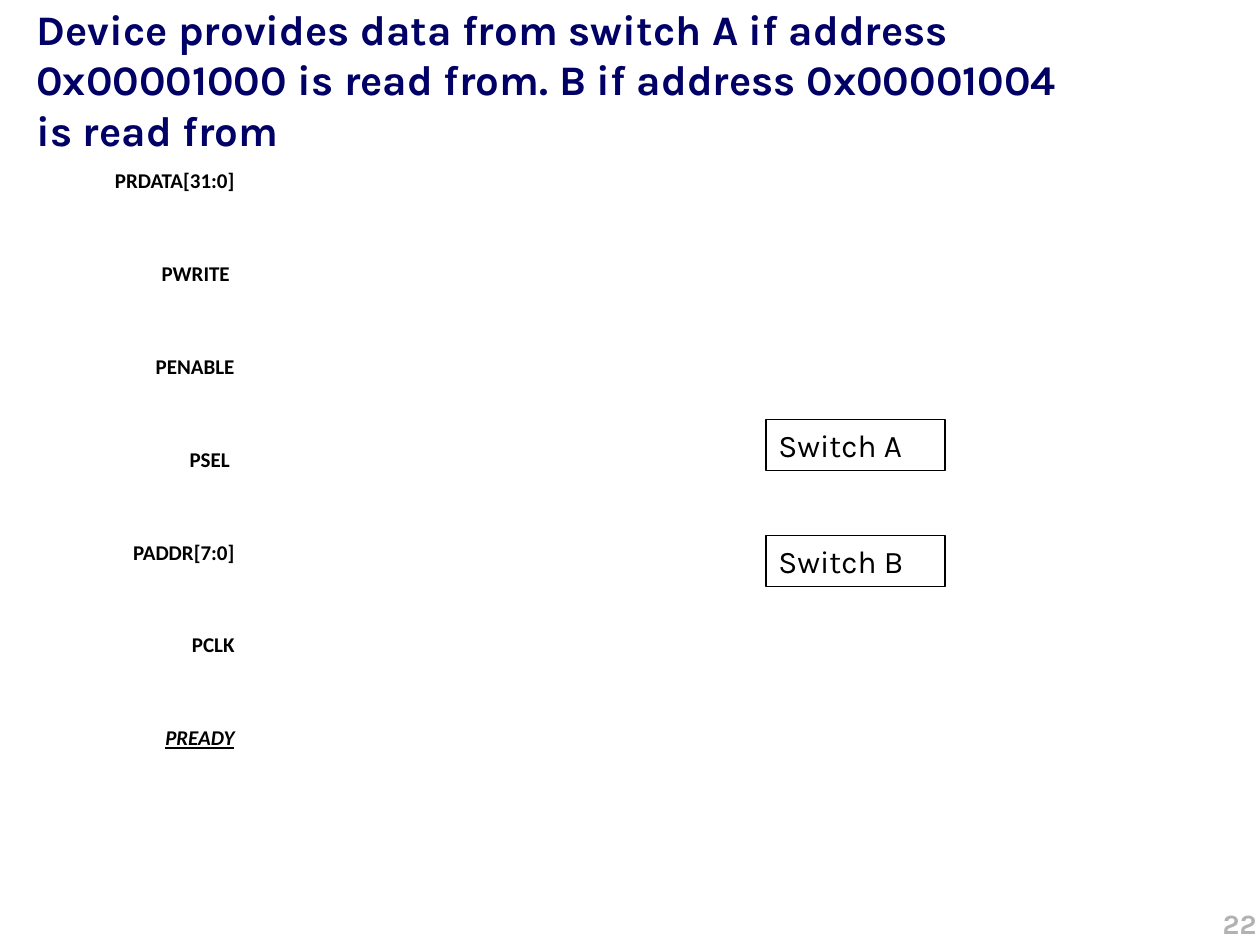
from pptx import Presentation
from pptx import util as u
from pptx.dml.color import RGBColor
from pptx.enum import shapes, text


def style(para, size, color, name="Karla", bold=False, align=text.PP_ALIGN.LEFT):
    para.alignment = align
    para.font.name = name
    para.font.size = u.Pt(size)
    para.font.bold = bold
    para.font.color.rgb = RGBColor.from_string(color)


def add_rectangle(left, top, width, height):
    box = page.shapes.add_shape(shapes.MSO_SHAPE.RECTANGLE, u.Cm(left), u.Cm(top),
                                u.Cm(width), u.Cm(height))
    box.shadow.inherit = False
    box.text_frame.word_wrap = True
    box.text_frame.vertical_anchor = text.MSO_ANCHOR.TOP
    return box


deck = Presentation()
deck.slide_width, deck.slide_height = u.Cm(25.4), u.Cm(19.05)
page = deck.slides.add_slide(deck.slide_layouts[5])

# Title
title = page.shapes.title
title.left, title.top, title.width, title.height = u.Cm(0.48), u.Cm(0), u.Cm(24.66), u.Cm(3.18)
title.text_frame.text = ("Device provides data from switch A if address \v"
                         "0x00001000 is read from. B if address 0x00001004\v"
                         "is read from")
title.text_frame.auto_size = text.MSO_AUTO_SIZE.NONE
title.text_frame.vertical_anchor = text.MSO_ANCHOR.MIDDLE
style(title.text_frame.paragraphs[0], 24, "000066", bold=True)

# Page number
number = page.shapes.add_textbox(u.Cm(17.53), u.Cm(18.16), u.Cm(8.05), u.Cm(1.27))
number.text_frame.word_wrap = True
number.text_frame.text = "22"
style(number.text_frame.paragraphs[0], 16, "B2B2B2", bold=True, align=text.PP_ALIGN.RIGHT)

# Bus signal names, spaced evenly down one column
signals = ["PRDATA[31:0]", "PWRITE ", "PENABLE", "PSEL ", "PADDR[7:0]", "PCLK", "PREADY"]
column = add_rectangle(1.73, 3.18, 3.25, 14.6)
column.fill.solid()
column.fill.fore_color.rgb = RGBColor.from_string("FFFFFF")
column.line.fill.background()
column.text_frame.text = "\n".join(signals)
for para in column.text_frame.paragraphs:
    style(para, 12, "000000", name="Calibri", bold=True, align=text.PP_ALIGN.RIGHT)
    para.line_spacing = 1.15
    para.space_after = u.Pt(36.5)
ready = column.text_frame.paragraphs[-1]
ready.font.italic = True
ready.font.underline = True

# Switches
for index, label in enumerate(["Switch A", "Switch B"]):
    switch = add_rectangle(15.44, 8.46 + index * 2.34, 3.61, 1.02)
    switch.fill.background()
    switch.line.color.rgb = RGBColor.from_string("000000")
    switch.line.width = u.Pt(0.75)
    switch.text_frame.text = label
    style(switch.text_frame.paragraphs[0], 18, "000000")

deck.save("out.pptx")
